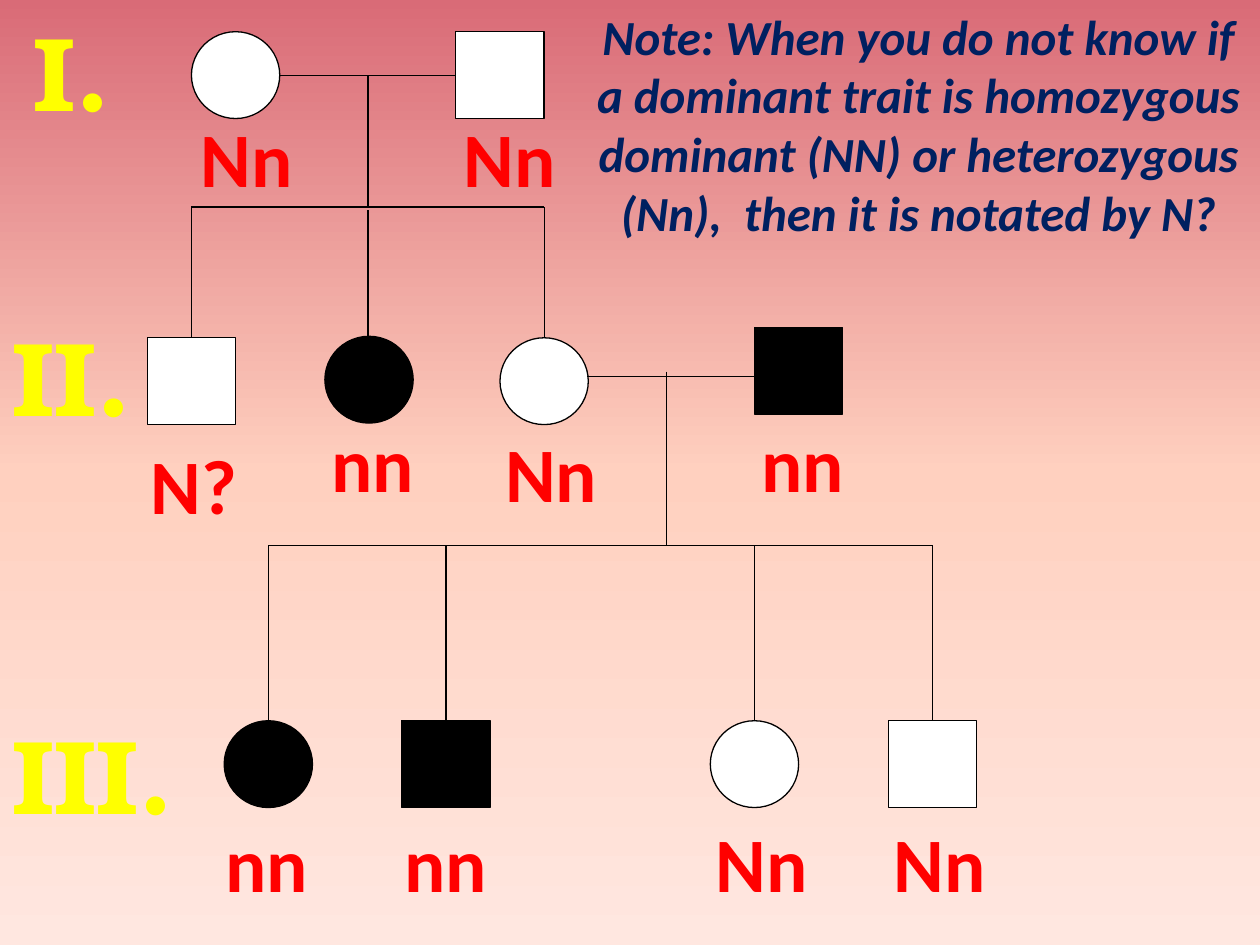
import copy
from dataclasses import dataclass

import pptx
import pptx.dml.color
import pptx.enum.shapes
import pptx.enum.text
import pptx.oxml
import pptx.util

Cm = pptx.util.Cm
Pt = pptx.util.Pt
Kind = pptx.enum.shapes.MSO_SHAPE
Align = pptx.enum.text.PP_ALIGN

WIDE, HIGH = 1.78, 1.75  # size of every person symbol, cm
BLACK, WHITE = "000000", "FFFFFF"

ROMAN = {"name": "TeX Gyre Bonum", "size": Pt(60), "bold": True}
GENE = {"name": "Calibri", "size": Pt(44), "bold": True}
NOTE = {"name": "Calibri", "size": Pt(28), "bold": True, "italic": True}


@dataclass
class Person:
    """One family member: symbol centre and top, label centre and top."""
    sex: str
    gene: str
    mid: float
    top: float
    tag_mid: float
    tag_top: float


@dataclass
class Line:
    x1: float
    y1: float
    x2: float
    y2: float


FOLK = [
    # Generation I
    Person("F", "Nn", 4.75, 0.64, 4.97, 2.11),
    Person("M", "Nn", 10.08, 0.64, 10.27, 2.11),
    # Generation II
    Person("M", "N?", 3.86, 6.81, 3.91, 8.69),
    Person("F", "nn", 7.44, 6.78, 7.52, 8.26),
    Person("F", "Nn", 10.97, 6.81, 11.11, 8.46),
    Person("M", "nn", 16.1, 6.6, 16.18, 8.26),
    # Generation III
    Person("F", "nn", 5.41, 14.53, 5.38, 16.31),
    Person("M", "nn", 8.99, 14.53, 8.99, 16.31),
    Person("F", "Nn", 15.21, 14.53, 15.35, 16.31),
    Person("M", "Nn", 18.8, 14.53, 18.94, 16.31),
]

BAR1, BAR2 = 4.17, 11  # heights of the two sibling bars
LINES = [
    # First couple, their descent and the sibling bar
    Line(5.64, 1.52, 9.19, 1.52),
    Line(7.42, 1.52, 7.42, BAR1),
    Line(3.86, BAR1, 10.97, BAR1),
    Line(7.42, 4.24, 7.42, 6.78),
    # Second couple, their descent and the sibling bar
    Line(11.84, 7.59, 15.39, 7.59),
    Line(13.44, 7.49, 13.44, BAR2),
    Line(5.41, BAR2, 18.8, BAR2),
]
LINES += [Line(x, BAR1, x, 6.81) for x in (3.86, 10.97)]
LINES += [Line(p.mid, BAR2, p.mid, p.top) for p in FOLK[6:]]


def tint(code: str) -> pptx.dml.color.RGBColor:
    return pptx.dml.color.RGBColor.from_string(code)


def paint(slide, stops: list[tuple[float, str]]) -> None:
    """Fill the background with a gradient from top to bottom."""
    fill = slide.background.fill
    fill.gradient()
    fill.gradient_angle = 270
    first = slide.element.xpath(".//a:gsLst/a:gs")[0]
    for _ in stops[2:]:
        first.addnext(copy.deepcopy(first))
    for stop, (place, code) in zip(fill.gradient_stops, stops):
        stop.position = place
        stop.color.rgb = tint(code)


def write(slide, text: str, box: tuple, style: dict, code: str,
          align=Align.CENTER) -> None:
    area = slide.shapes.add_textbox(*map(Cm, box))
    frame = area.text_frame
    frame.word_wrap = True
    para = frame.paragraphs[0]
    para.alignment = align
    run = para.add_run()
    run.text = text
    for key, value in style.items():
        setattr(run.font, key, value)
    run.font.color.rgb = tint(code)


def join(slide, line: Line) -> None:
    ends = map(Cm, (line.x1, line.y1, line.x2, line.y2))
    link = slide.shapes.add_connector(
        pptx.enum.shapes.MSO_CONNECTOR.STRAIGHT, *ends)
    link.line.color.rgb = tint(BLACK)
    link.line.width = Pt(0.75)
    link.element.spPr.append(pptx.oxml.parse_xml(
        '<a:effectLst xmlns:a='
        '"http://schemas.openxmlformats.org/drawingml/2006/main"/>'))


def draw(slide, one: Person) -> None:
    """Circle for a woman, square for a man, black when recessive."""
    kind = Kind.OVAL if one.sex == "F" else Kind.RECTANGLE
    shape = slide.shapes.add_shape(
        kind, Cm(one.mid - WIDE / 2), Cm(one.top), Cm(WIDE), Cm(HIGH))
    shape.shadow.inherit = False
    shape.fill.solid()
    shape.fill.fore_color.rgb = tint(BLACK if one.gene == "nn" else WHITE)
    shape.line.color.rgb = tint(BLACK)
    shape.line.width = Pt(0.75)


def label(slide, one: Person) -> None:
    wide = 3.18 if one.gene == "Nn" else 2.74
    box = (one.tag_mid - wide / 2, one.tag_top, wide, 2.13)
    write(slide, one.gene, box, GENE, "FF0000")


def main() -> None:
    deck = pptx.Presentation()
    deck.slide_width, deck.slide_height = Cm(25.4), Cm(19.05)
    slide = deck.slides.add_slide(deck.slide_layouts[6])
    paint(slide, [(0, "D96B77"), (0.5, "FFD0BF"), (1, "FFE7E0")])

    # Family tree
    for one in FOLK:
        draw(slide, one)
    for line in LINES:
        join(slide, line)
    for one in FOLK:
        label(slide, one)

    # Generation numbers
    for text, left, top, wide in (("I.", 0.43, 0, 2.34),
                                  ("II.", 0, 6.15, 2.97),
                                  ("III.", 0, 14.17, 3.81)):
        write(slide, text, (left, top, wide, 2.82), ROMAN, "FFFF00",
              Align.LEFT)

    # Note on notation
    write(slide, "Note: When you do not know if a dominant trait is "
          "homozygous dominant (NN) or heterozygous (Nn),  then it is "
          "notated by N?", (11.63, 0, 13.77, 5.05), NOTE, "002060")

    deck.save("out.pptx")


if __name__ == "__main__":
    main()
